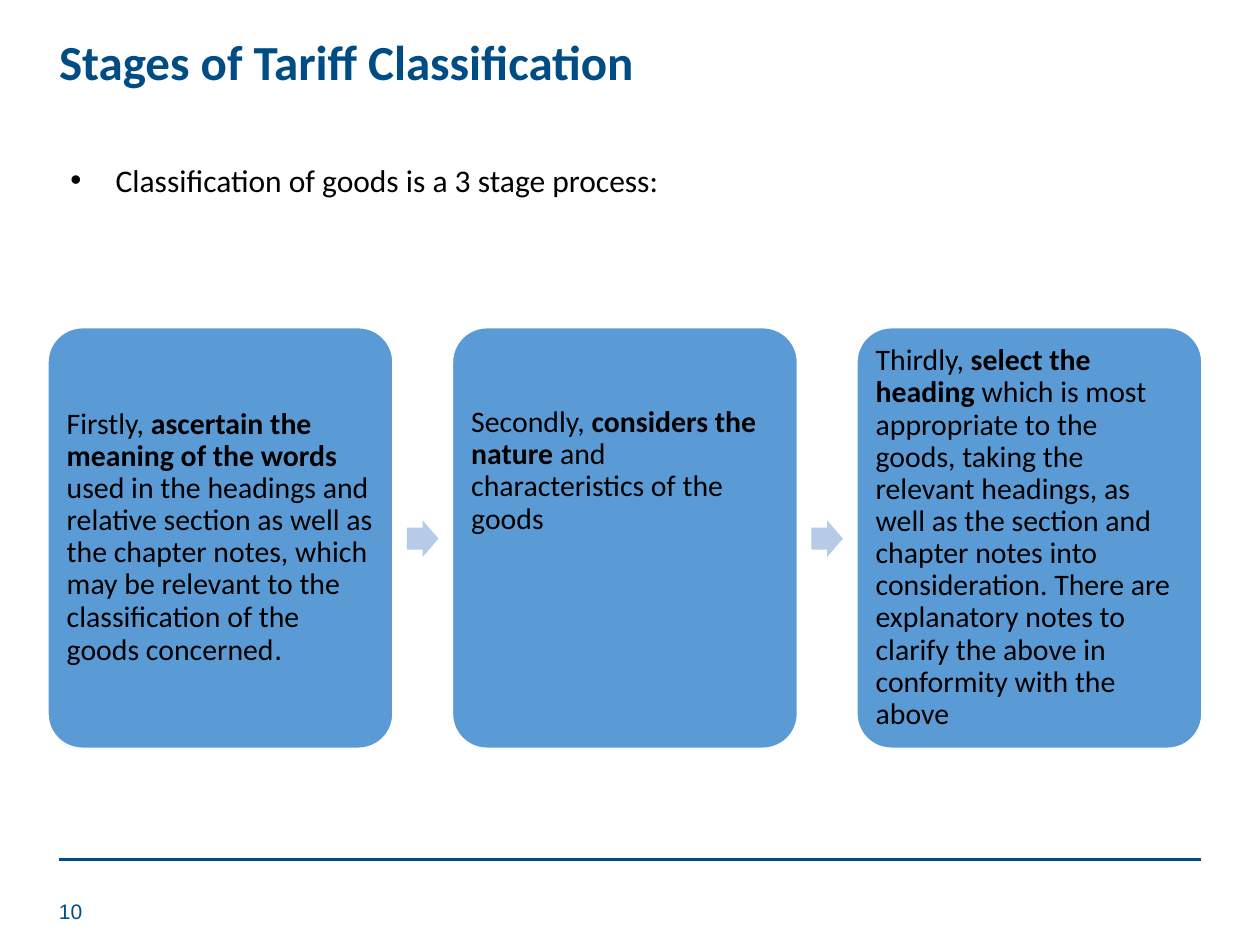
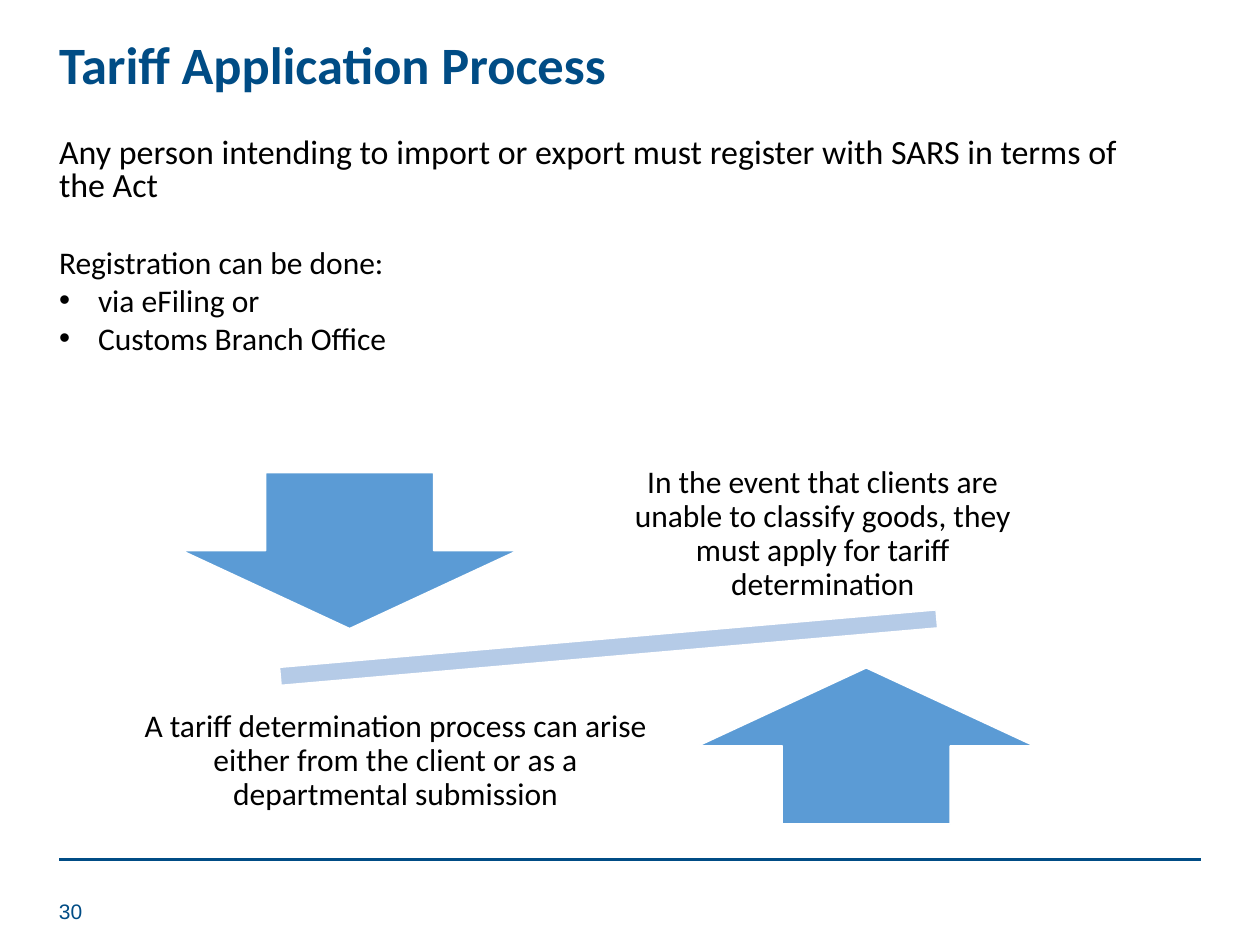
from lxml.etree import SubElement
from pptx import Presentation
from pptx.dml.color import RGBColor
from pptx.enum.shapes import MSO_CONNECTOR, MSO_SHAPE
from pptx.enum.text import MSO_ANCHOR, PP_ALIGN
from pptx.oxml.ns import qn
from pptx.util import Inches, Pt

# Content
STAGES = [
    [("Firstly, ", False), ("ascertain the meaning of the words ", True),
     ("used in the headings and relative section as well as the chapter notes, "
      "which may be relevant to the classification of the goods concerned", False)],
    [("Secondly, ", False), ("considers the nature ", True),
     ("and characteristics of the goods", False)],
    [("Thirdly, ", False), ("select the heading ", True),
     ("which is most appropriate to the goods, taking the relevant headings, "
      "as well as the section and chapter notes into consideration. There are "
      "explanatory notes to clarify the above in conformity with the above", False)],
]
STAGE_INTRO = "Classification of goods is a 3 stage process:"
REGISTER_RULE = ("Any person intending to import or export must register with "
                 "SARS in terms of the Act")
REGISTRATION = "Registration can be done:"
CHANNELS = ["via eFiling or", "Customs Branch Office"]
# Each arrow: shape, left, top
ARROWS = [(MSO_SHAPE.DOWN_ARROW, 1.44, 3.75), (MSO_SHAPE.UP_ARROW, 5.54, 5.3)]
# Each caption: text, left, top, width
CAPTIONS = [
    ("In the event that clients are unable to classify goods, they must apply "
     "for tariff determination", 4.63, 3.59, 3.8),
    ("A tariff determination process can arise either from the client or as a "
     "departmental submission", 0.84, 5.39, 4.6),
]

# Shared look
NAVY = RGBColor(0x00, 0x4C, 0x85)
BLUE = RGBColor(0x5B, 0x9B, 0xD5)
PALE_BLUE = RGBColor(0xB5, 0xCB, 0xE7)
WHITE = RGBColor(0xFF, 0xFF, 0xFF)
BLACK = RGBColor(0, 0, 0)
MARGIN = 0.37
TEXT_WIDTH = 8.62


def style(para, size, color=BLACK, name="Calibri", bold=False, spacing=None):
    if spacing:
        para.line_spacing = spacing
    para.font.size = Pt(size)
    para.font.name = name
    para.font.bold = bold
    para.font.color.rgb = color


def add_bullet(para, indent):
    props = para._p.get_or_add_pPr()
    props.set("marL", str(Inches(indent)))
    props.set("indent", str(-Inches(indent)))
    SubElement(props, qn("a:buFont"), typeface="Arial")
    SubElement(props, qn("a:buChar"), char="•")


def set_insets(frame, inset):
    frame.margin_left = frame.margin_right = Inches(inset)
    frame.margin_top = frame.margin_bottom = Inches(inset)


def add_text(page, left, top, width, height, text):
    box = page.shapes.add_textbox(Inches(left), Inches(top), Inches(width), Inches(height))
    box.text_frame.word_wrap = True
    box.text_frame.text = text
    return box.text_frame


def add_figure(page, kind, left, top, width, height, fill, outlined=True):
    figure = page.shapes.add_shape(kind, Inches(left), Inches(top), Inches(width), Inches(height))
    figure.shadow.inherit = False
    figure.fill.solid()
    figure.fill.fore_color.rgb = fill
    if outlined:
        figure.line.color.rgb = WHITE
        figure.line.width = Pt(1)
    else:
        figure.line.fill.background()
    return figure


def add_page(deck, title, title_size, title_top, number):
    page = deck.slides.add_slide(deck.slide_layouts[6])
    rule = page.shapes.add_connector(MSO_CONNECTOR.STRAIGHT, Inches(0.47), Inches(6.82),
                                     Inches(9.53), Inches(6.82))
    rule.line.color.rgb = NAVY
    rule.line.width = Pt(2)
    SubElement(rule._element.spPr, qn("a:effectLst"))
    frame = add_text(page, MARGIN, title_top, TEXT_WIDTH, 0.58, title)
    style(frame.paragraphs[0], title_size, NAVY, bold=True, spacing=0.9)
    frame = add_text(page, MARGIN, 7.03, 0.46, 0.4, str(number))
    frame.vertical_anchor = MSO_ANCHOR.MIDDLE
    style(frame.paragraphs[0], 12, NAVY, "Arial")
    return page


def build_stages(deck):
    page = add_page(deck, "Stages of Tariff Classification", 28, 0.25, 10)

    # Three stage cards with an arrow in each gap
    first_left, top, width, height, step = 0.38, 2.6, 2.74, 3.34, 3.21
    for index, stage in enumerate(STAGES):
        left = first_left + index * step
        if index:
            arrow = add_figure(page, MSO_SHAPE.RIGHT_ARROW, left - 0.36, 4.13, 0.25, 0.29,
                               PALE_BLUE, outlined=False)
            arrow.adjustments[0] = 0.6
        card = add_figure(page, MSO_SHAPE.ROUNDED_RECTANGLE, left, top, width, height, BLUE)
        card.adjustments[0] = 0.1
        frame = card.text_frame
        frame.word_wrap = True
        frame.vertical_anchor = MSO_ANCHOR.MIDDLE
        set_insets(frame, 0.07)
        para = frame.paragraphs[0]
        para.alignment = PP_ALIGN.LEFT
        style(para, 17, spacing=0.9)
        for text, bold in stage:
            span = para.add_run()
            span.text = text
            span.font.bold = bold
        if index == 0:
            stop = para.add_run()
            stop.text = "."
            stop.font.name = "Arial"
            stop.font.size = Pt(18)
        elif index == 1:
            frame.vertical_anchor = MSO_ANCHOR.TOP
            frame.margin_top = Inches(0.55)

    # Introduction
    para = add_text(page, 0.46, 1.23, 9.09, 0.4, STAGE_INTRO).paragraphs[0]
    add_bullet(para, 0.36)
    style(para, 18)


def build_application(deck):
    page = add_page(deck, "Tariff Application Process", 30, 0.26, 30)
    frame = add_text(page, MARGIN, 1.05, TEXT_WIDTH, 0.67, REGISTER_RULE)
    style(frame.paragraphs[0], 19.4, spacing=0.8)

    # Tilted beam between two opposing arrows
    beam = add_figure(page, MSO_SHAPE.MATH_MINUS, 1.27, 4.83, 7.12, 0.62, PALE_BLUE)
    beam.rotation = 355
    for kind, left, top in ARROWS:
        add_figure(page, kind, left, top, 2.67, 1.24, BLUE)
    for text, left, top, width in CAPTIONS:
        frame = add_text(page, left, top, width, 1.3, text)
        frame.vertical_anchor = MSO_ANCHOR.MIDDLE
        set_insets(frame, 0.14)
        frame.paragraphs[0].alignment = PP_ALIGN.CENTER
        style(frame.paragraphs[0], 18, spacing=0.9)

    # Ways to register
    frame = add_text(page, MARGIN, 1.88, TEXT_WIDTH, 1.01, REGISTRATION)
    style(frame.paragraphs[0], 18)
    for channel in CHANNELS:
        para = frame.add_paragraph()
        para.text = channel
        add_bullet(para, 0.31)
        style(para, 18)


def main():
    deck = Presentation()
    deck.slide_width = Inches(10)
    deck.slide_height = Inches(7.5)
    build_stages(deck)
    build_application(deck)
    deck.save("out.pptx")


if __name__ == "__main__":
    main()
